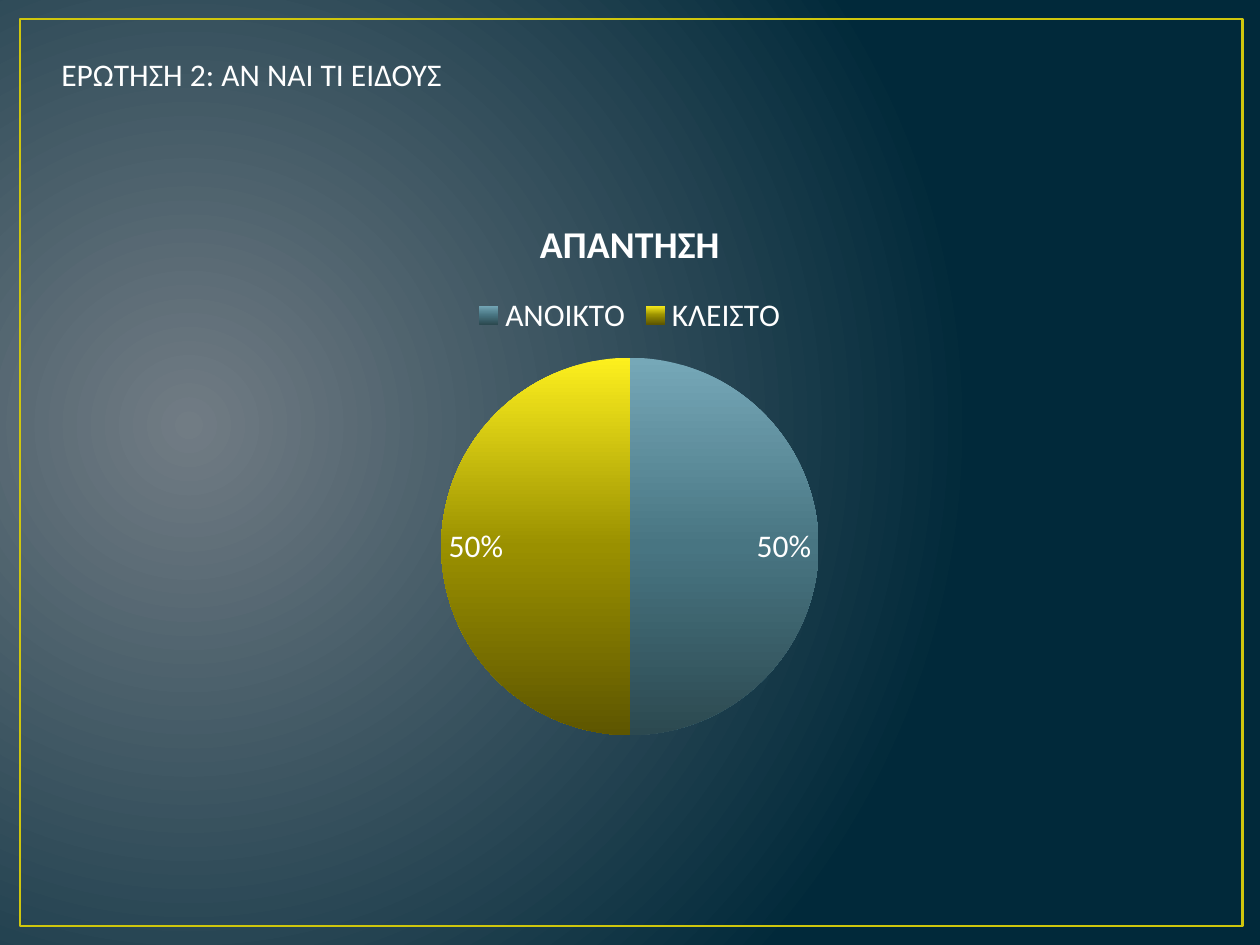
from copy import deepcopy

from pptx import Presentation
from pptx.chart.data import CategoryChartData
from pptx.dml.color import RGBColor
from pptx.enum.chart import XL_CHART_TYPE, XL_LABEL_POSITION, XL_LEGEND_POSITION
from pptx.enum.shapes import MSO_SHAPE
from pptx.oxml.ns import qn
from pptx.oxml.xmlchemy import OxmlElement
from pptx.util import Pt

PIE = XL_CHART_TYPE.PIE
INSIDE_END = XL_LABEL_POSITION.INSIDE_END
LEGEND_TOP = XL_LEGEND_POSITION.TOP
RECTANGLE = MSO_SHAPE.RECTANGLE

WHITE = RGBColor(0xFF, 0xFF, 0xFF)
GREY = RGBColor(0x71, 0x7C, 0x84)
NAVY = RGBColor(0x01, 0x29, 0x3A)
YELLOW = RGBColor(0xCF, 0xC6, 0x0D)
OPEN_SHADES = [RGBColor(0x76, 0xA8, 0xB8), RGBColor(0x48, 0x75, 0x82), RGBColor(0x2C, 0x49, 0x50)]
CLOSED_SHADES = [RGBColor(0xFD, 0xF0, 0x1E), RGBColor(0x9A, 0x90, 0x00), RGBColor(0x5E, 0x56, 0x00)]
FONT = "Calibri"


def write_text(frame, text, size=18, bold=False, color=WHITE):
    run = frame.paragraphs[0].add_run()
    run.text = text
    run.font.name = FONT
    run.font.size = Pt(size)
    run.font.bold = bold
    run.font.color.rgb = color


presentation = Presentation()
presentation.slide_width = Pt(720)
presentation.slide_height = Pt(540)
slide = presentation.slides.add_slide(presentation.slide_layouts[6])

backdrop = slide.background.fill
backdrop.gradient()
for stop, color in zip(backdrop.gradient_stops, (GREY, NAVY)):
    stop.color.rgb = color
gradient = next(slide.element.iter(qn("a:gradFill")))
gradient.remove(gradient.find(qn("a:lin")))
glow = OxmlElement("a:path")
glow.set("path", "circle")
focus = OxmlElement("a:fillToRect")
for side, percent in zip("ltrb", (15, 50, 85, 60)):
    focus.set(side, str(percent * 1000))
glow.append(focus)
gradient.find(qn("a:gsLst")).addnext(glow)

border = slide.shapes.add_shape(RECTANGLE, Pt(11.5), Pt(10.8), Pt(698.4), Pt(518.4))
border.shadow.inherit = False
border.fill.background()
border.line.color.rgb = YELLOW
border.line.width = Pt(1.5)

question = slide.shapes.add_textbox(Pt(28), Pt(28), Pt(669.6), Pt(29)).text_frame
question.word_wrap = True
write_text(question, "ΕΡΩΤΗΣΗ 2: ΑΝ ΝΑΙ ΤΙ ΕΙΔΟΥΣ")

answers = CategoryChartData(number_format="0")
answers.categories = ["ΑΝΟΙΚΤΟ", "ΚΛΕΙΣΤΟ"]
answers.add_series("ΑΠΑΝΤΗΣΗ", (50, 50))
chart = slide.shapes.add_chart(PIE, Pt(120), Pt(110), Pt(480), Pt(320), answers).chart
chart.font.name = FONT
chart.font.size = Pt(18)
chart.font.color.rgb = WHITE
chart.has_title = True
write_text(chart.chart_title.text_frame, "ΑΠΑΝΤΗΣΗ", size=21.6, bold=True)
chart.chart_title.include_in_layout = False
chart.has_legend = True
chart.legend.position = LEGEND_TOP
chart.legend.include_in_layout = False

pie = chart.plots[0]
pie.vary_by_categories = True
pie.has_data_labels = True
labels = pie.data_labels
labels.show_percentage = True
labels.show_value = False
labels.number_format = "0%"
labels.number_format_is_linked = False
labels.position = INSIDE_END

slice_fills = []
for index in range(2):
    fill = pie.series[0].points[index].format.fill
    fill.gradient()
    fill.gradient_angle = 270
    slice_fills.append(fill)
for stops in chart.element.iter(qn("a:gsLst")):
    stops.insert(1, deepcopy(stops[0]))
for fill, shades in zip(slice_fills, (OPEN_SHADES, CLOSED_SHADES)):
    for stop, position, shade in zip(fill.gradient_stops, (0, 0.5, 1), shades):
        stop.position = position
        stop.color.rgb = shade

presentation.save("out.pptx")
